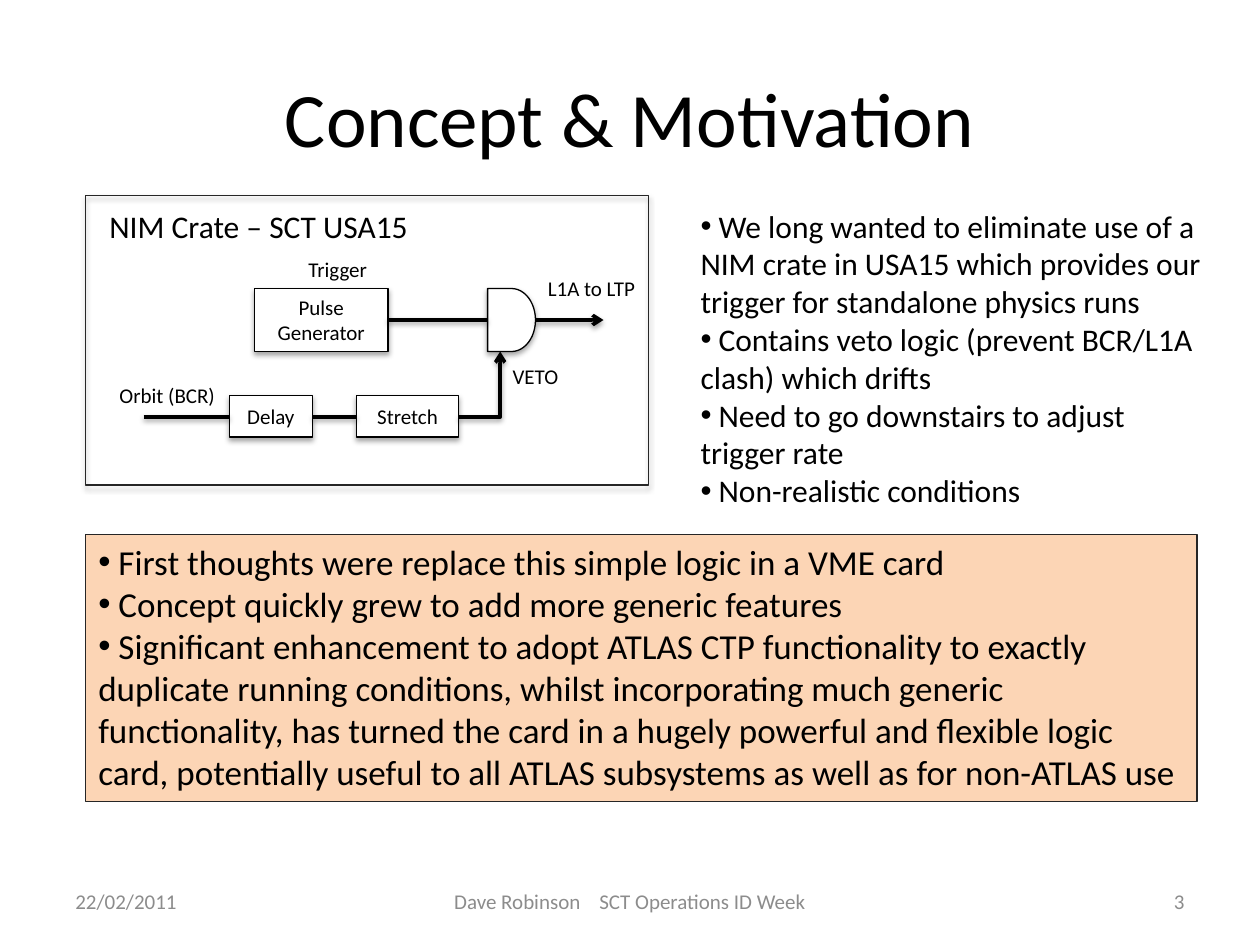
from dataclasses import dataclass

from lxml import etree
from pptx import Presentation
from pptx import util as u
from pptx.dml.color import RGBColor
from pptx.enum import shapes, text
from pptx.oxml.ns import qn


@dataclass(frozen=True)
class Theme:
    font: str = "Calibri"
    ink: str = "000000"
    paper: str = "FFFFFF"
    frame: str = "262626"
    muted: str = "8C8C8C"
    accent: str = "FCD5B5"
    title: int = 44
    summary: int = 20
    body: int = 18
    small: int = 12
    outline: float = 0.75
    wire: float = 2


T = Theme()
AL, ANC = text.PP_ALIGN, text.MSO_ANCHOR


def rgb(value):
    return RGBColor.from_string(value)


def place(s, box):
    s.left, s.top, s.width, s.height = (u.Inches(v) for v in box)


def write(p, words, size, color=T.ink, align=AL.LEFT):
    p.alignment = align
    r = p.add_run()
    r.text = words
    r.font.name, r.font.size = T.font, u.Pt(size)
    r.font.color.rgb = rgb(color)


def outline(s, color=T.ink, width=T.outline):
    s.line.color.rgb = rgb(color)
    s.line.width = u.Pt(width)


def cast_shadow(effects, alpha, dist):
    sh = etree.SubElement(effects, qn("a:outerShdw"), blurRad=str(u.Pt(3.1)),
                          dist=str(u.Pt(dist)), dir="5400000", rotWithShape="0")
    clr = etree.SubElement(sh, qn("a:srgbClr"), val=T.ink)
    etree.SubElement(clr, qn("a:alpha"), val=str(alpha * 1000))


def label(slide, box, words, size=T.small, color=T.ink, align=AL.LEFT,
          anchor=ANC.TOP, wrap=False):
    s = slide.shapes.add_textbox(*(u.Inches(v) for v in box))
    tf = s.text_frame
    tf.word_wrap, tf.vertical_anchor = wrap, anchor
    write(tf.paragraphs[0], words, size, color, align)


def block(slide, box, words="", kind=shapes.MSO_SHAPE.RECTANGLE,
          fill=T.paper, line=T.ink):
    s = slide.shapes.add_shape(kind, *(u.Inches(v) for v in box))
    if fill:
        s.fill.solid()
        s.fill.fore_color.rgb = rgb(fill)
    else:
        s.fill.background()
    outline(s, line)
    s.shadow.inherit = False
    cast_shadow(s._element.spPr.find(qn("a:effectLst")), 35, 1.8)
    if words:
        tf = s.text_frame
        tf.word_wrap, tf.vertical_anchor = True, ANC.MIDDLE
        write(tf.paragraphs[0], words, T.small, align=AL.CENTER)


def wire(slide, start, end, arrow=False, corner=False):
    kind = shapes.MSO_CONNECTOR.ELBOW if corner else shapes.MSO_CONNECTOR.STRAIGHT
    s = slide.shapes.add_connector(kind, *(u.Inches(v) for v in start + end))
    outline(s, width=T.wire)
    pr = s._element.spPr
    if corner:  # one bend: across, then up
        pr.find(qn("a:prstGeom")).set("prst", "bentConnector2")
    if arrow:
        etree.SubElement(pr.find(qn("a:ln")), qn("a:tailEnd"), type="arrow")
    cast_shadow(etree.SubElement(pr, qn("a:effectLst")), 38, 1.6)


def heading(s, box, words):
    place(s, box)
    tf = s.text_frame
    tf.vertical_anchor = ANC.MIDDLE
    write(tf.paragraphs[0], words, T.title, align=AL.CENTER)


def bullet_list(s, box, items, size):
    place(s, box)
    tf = s.text_frame
    tf.word_wrap, tf.auto_size = True, text.MSO_AUTO_SIZE.NONE
    tf.vertical_anchor = ANC.TOP
    for i, item in enumerate(items):
        p = tf.add_paragraph() if i else tf.paragraphs[0]
        p.space_before = u.Pt(0)
        write(p, " " + item, size)
        pr = p._p.get_or_add_pPr()
        pr.set("marL", "0")
        pr.set("indent", "0")
        etree.SubElement(pr, qn("a:buFont"), typeface="Arial")
        etree.SubElement(pr, qn("a:buChar"), char="•")


def trigger_diagram(slide, box):
    x, y, w, h = box

    def at(dx, dy, *size):
        return (x + dx, y + dy, *size)

    # Logic blocks
    block(slide, at(3.19, 0.74, 0.38, 0.5), kind=shapes.MSO_SHAPE.FLOWCHART_DELAY)
    block(slide, at(1.14, 1.59, 0.66, 0.33), "Delay")
    block(slide, at(2.15, 1.59, 0.81, 0.33), "Stretch")
    block(slide, at(1.34, 0.74, 1.06, 0.5), "Pulse Generator")

    # Signal paths: trigger row, then orbit row up to the veto input
    trigger, orbit = 0.99, 1.76
    wire(slide, at(2.4, trigger), at(3.19, trigger))
    wire(slide, at(3.57, trigger), at(4.11, trigger), arrow=True)
    wire(slide, at(0.46, orbit), at(1.14, orbit))
    wire(slide, at(1.8, orbit), at(2.15, orbit))
    wire(slide, at(2.96, orbit), at(3.29, 1.24), arrow=True, corner=True)

    # Frame and labels
    block(slide, box, fill=None, line=T.frame)
    label(slide, at(0.09, 0.04, 2.59, 0.4), "NIM Crate – SCT USA15", T.body)
    for dx, dy, width, words in ((1.67, 0.44, 0.67, "Trigger"),
                                 (0.17, 1.44, 0.97, "Orbit (BCR)"),
                                 (3.57, 0.59, 0.9, "L1A to LTP"),
                                 (3.29, 1.29, 0.57, "VETO")):
        label(slide, at(dx, dy, width, 0.3), words)


def summary_panel(s, box, items):
    bullet_list(s, box, items, T.summary)
    s.fill.solid()
    s.fill.fore_color.rgb = rgb(T.accent)
    outline(s, T.frame)


def footer(slide, box):
    x, y, w, h = box
    side, middle = 2.33, 3.17
    for left, width, words, align in (
            (x, side, "22/02/2011", AL.LEFT),
            (x + (w - middle) / 2, middle,
             "Dave Robinson    SCT Operations ID Week", AL.CENTER),
            (x + w - side, side, "3", AL.RIGHT)):
        label(slide, (left, y, width, h), words, color=T.muted, align=align,
              anchor=ANC.MIDDLE, wrap=True)


def main():
    prs = Presentation()
    prs.slide_width, prs.slide_height = u.Inches(10), u.Inches(7.5)
    slide = prs.slides.add_slide(prs.slide_layouts.get_by_name("Two Content"))
    title, motives, summary = slide.placeholders

    heading(title, (0.5, 0.3, 9, 1.25), "Concept & Motivation")
    trigger_diagram(slide, (0.68, 1.55, 4.47, 2.3))
    bullet_list(motives, (5.46, 1.59, 4.29, 2.52), (
        "We long wanted to eliminate use of a NIM crate in USA15 which provides "
        "our trigger for standalone physics runs",
        "Contains veto logic (prevent BCR/L1A clash) which drifts",
        "Need to go downstairs to adjust trigger rate",
        "Non-realistic conditions"), T.body)
    summary_panel(summary, (0.68, 4.24, 8.82, 2.12), (
        "First thoughts were replace this simple logic in a VME card",
        "Concept quickly grew to add more generic features",
        "Significant enhancement to adopt ATLAS CTP functionality to exactly "
        "duplicate running conditions, whilst incorporating much generic "
        "functionality, has turned the card in a hugely powerful and flexible "
        "logic card, potentially useful to all ATLAS subsystems as well as for "
        "non-ATLAS use"))
    footer(slide, (0.5, 6.95, 9, 0.4))
    prs.save("out.pptx")


if __name__ == "__main__":
    main()
